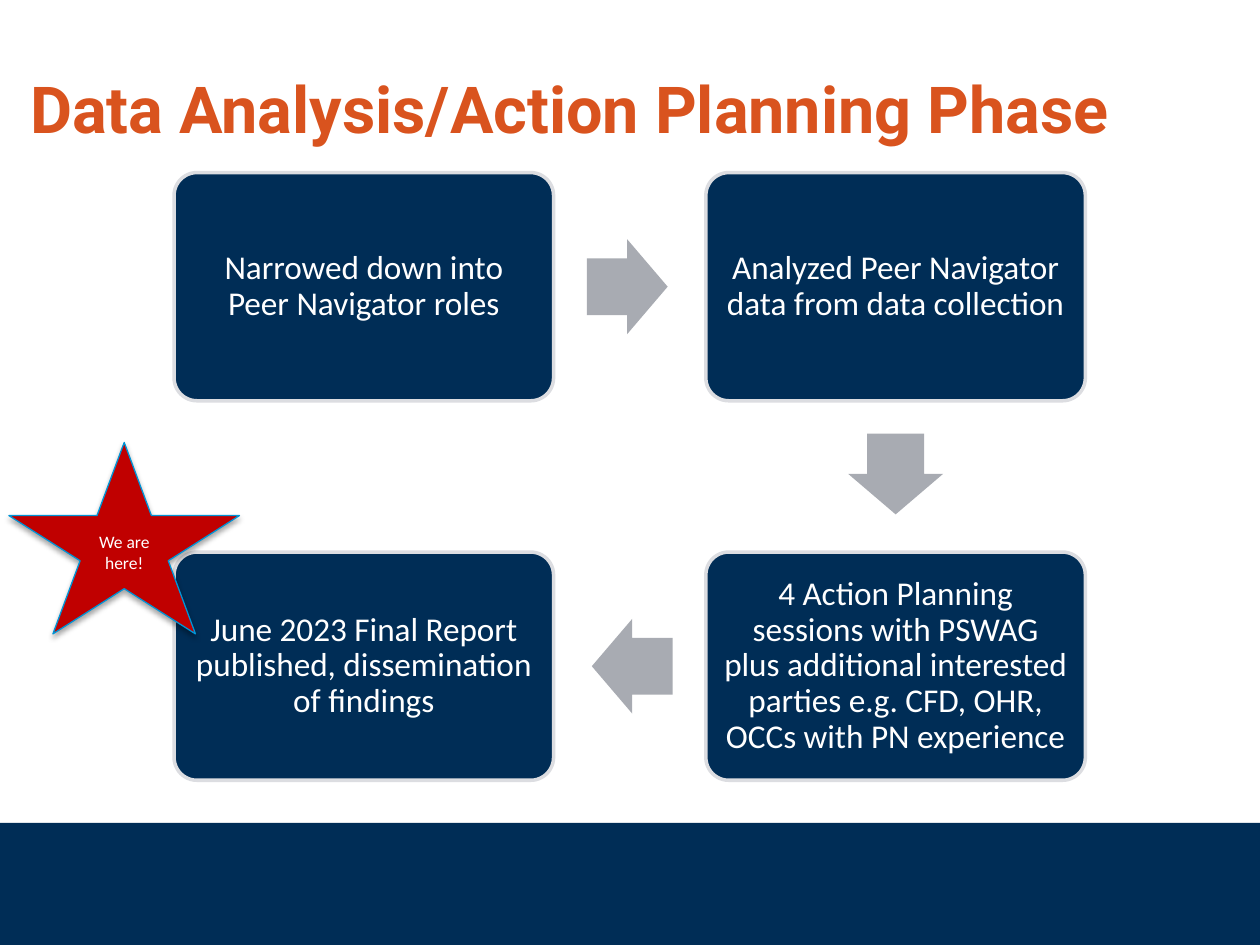
from lxml import etree
from pptx import Presentation
from pptx.dml.color import RGBColor
from pptx.enum.shapes import MSO_SHAPE
from pptx.enum.text import MSO_ANCHOR, PP_ALIGN
from pptx.oxml.ns import qn
from pptx.util import Cm, Pt

RECT, ROUNDED = MSO_SHAPE.RECTANGLE, MSO_SHAPE.ROUNDED_RECTANGLE
ARROW, STAR = MSO_SHAPE.RIGHT_ARROW, MSO_SHAPE.STAR_5_POINT
MIDDLE, LEFT, CENTER = MSO_ANCHOR.MIDDLE, PP_ALIGN.LEFT, PP_ALIGN.CENTER

NAVY = RGBColor(0x00, 0x2D, 0x56)
ORANGE = RGBColor(0xD9, 0x53, 0x1E)
GRAY = RGBColor(0xA8, 0xAB, 0xB2)
PALE = RGBColor(0xDC, 0xDD, 0xE1)
RED = RGBColor(0xC0, 0x00, 0x00)
BLUE = RGBColor(0x00, 0x94, 0xD6)
WHITE = RGBColor(0xFF, 0xFF, 0xFF)

# Content: steps in reading order of the flow, with (column, row)
TITLE = "Data Analysis/Action Planning Phase"
STEPS = [
    ("Narrowed down into Peer Navigator roles", 0, 0),
    ("Analyzed Peer Navigator data from data collection", 1, 0),
    ("4 Action Planning sessions with PSWAG plus additional interested "
     "parties e.g. CFD, OHR, OCCs with PN experience", 1, 1),
    ("June 2023 Final Report published, dissemination of findings", 0, 1),
]
MARKER = "We are here!"

TITLE_FONT = {"name": "Roboto", "size": Pt(37), "bold": True}
STEP_FONT = {"name": "Calibri", "size": Pt(19)}
MARKER_FONT = {"name": "Calibri", "size": Pt(10)}

# Grid, in centimetres
GRID_LEFT, GRID_TOP = 3.51, 3.48
STEP_W, STEP_H = 7.65, 4.6
PITCH_X, PITCH_Y = 10.72, 7.65
ARROW_W, ARROW_H = 1.63, 1.91
ARROW_SHIFT = 0.05  # arrows sit slightly nearer the step they leave


def write(shape, text, font, color, align=CENTER, insets=(0.25, 0.13), spacing=None):
    frame = shape.text_frame
    frame.word_wrap = True
    frame.vertical_anchor = MIDDLE
    frame.margin_left = frame.margin_right = Cm(insets[0])
    frame.margin_top = frame.margin_bottom = Cm(insets[1])
    para = frame.paragraphs[0]
    para.alignment = align
    if spacing:
        para.line_spacing = spacing
    span = para.add_run()
    span.text = text
    for name, value in font.items():
        setattr(span.font, name, value)
    span.font.color.rgb = color


def add_shape(page, kind, left, top, width, height, fill, line=None, line_width=0):
    shape = page.shapes.add_shape(kind, Cm(left), Cm(top), Cm(width), Cm(height))
    shape.shadow.inherit = False
    shape.fill.solid()
    shape.fill.fore_color.rgb = fill
    if line is None:
        shape.line.fill.background()
    else:
        shape.line.color.rgb = line
        shape.line.width = Pt(line_width)
    return shape


def add_shadow(shape):
    effects = shape._element.spPr.find(qn("a:effectLst"))
    shadow = etree.SubElement(effects, qn("a:outerShdw"), blurRad=str(Pt(3.1)),
                              dist=str(Pt(1.8)), dir="5400000", rotWithShape="0")
    color = etree.SubElement(shadow, qn("a:srgbClr"), val="000000")
    etree.SubElement(color, qn("a:alpha"), val="35000")


def add_arrow(page, start, end):
    """Put an arrow in the gap between two neighbouring steps."""
    dx, dy = end[0] - start[0], end[1] - start[1]
    center_x = GRID_LEFT + STEP_W / 2 + PITCH_X * (start[0] + end[0]) / 2 - dx * ARROW_SHIFT
    center_y = GRID_TOP + STEP_H / 2 + PITCH_Y * (start[1] + end[1]) / 2 - dy * ARROW_SHIFT
    arrow = add_shape(page, ARROW, center_x - ARROW_W / 2, center_y - ARROW_H / 2,
                      ARROW_W, ARROW_H, GRAY)
    arrow.adjustments[0], arrow.adjustments[1] = 0.6, 0.5
    arrow.rotation = {(1, 0): 0, (0, 1): 90, (-1, 0): 180}[dx, dy]


def main():
    deck = Presentation()
    deck.slide_width, deck.slide_height = Cm(25.4), Cm(19.05)
    page = deck.slides.add_slide(deck.slide_layouts[6])

    # Footer band and title
    add_shape(page, RECT, 0, 16.59, 25.4, 2.46, NAVY)
    title = page.shapes.add_textbox(Cm(0.36), Cm(0.38), Cm(24.18), Cm(3.58))
    write(title, TITLE, TITLE_FONT, ORANGE, LEFT)

    # Steps
    for text, column, row in STEPS:
        box = add_shape(page, ROUNDED, GRID_LEFT + column * PITCH_X,
                        GRID_TOP + row * PITCH_Y, STEP_W, STEP_H, NAVY, PALE, 2)
        box.adjustments[0] = 0.1
        write(box, text, STEP_FONT, WHITE, insets=(0.2, 0.2), spacing=0.9)

    # Arrows from each step to the next
    for start, end in zip(STEPS, STEPS[1:]):
        add_arrow(page, start[1:], end[1:])

    # Star marking the current step
    star = add_shape(page, STAR, 0.18, 8.92, 4.65, 3.86, RED, BLUE, 0.75)
    add_shadow(star)
    write(star, MARKER, MARKER_FONT, WHITE)

    deck.save("out.pptx")


if __name__ == "__main__":
    main()
